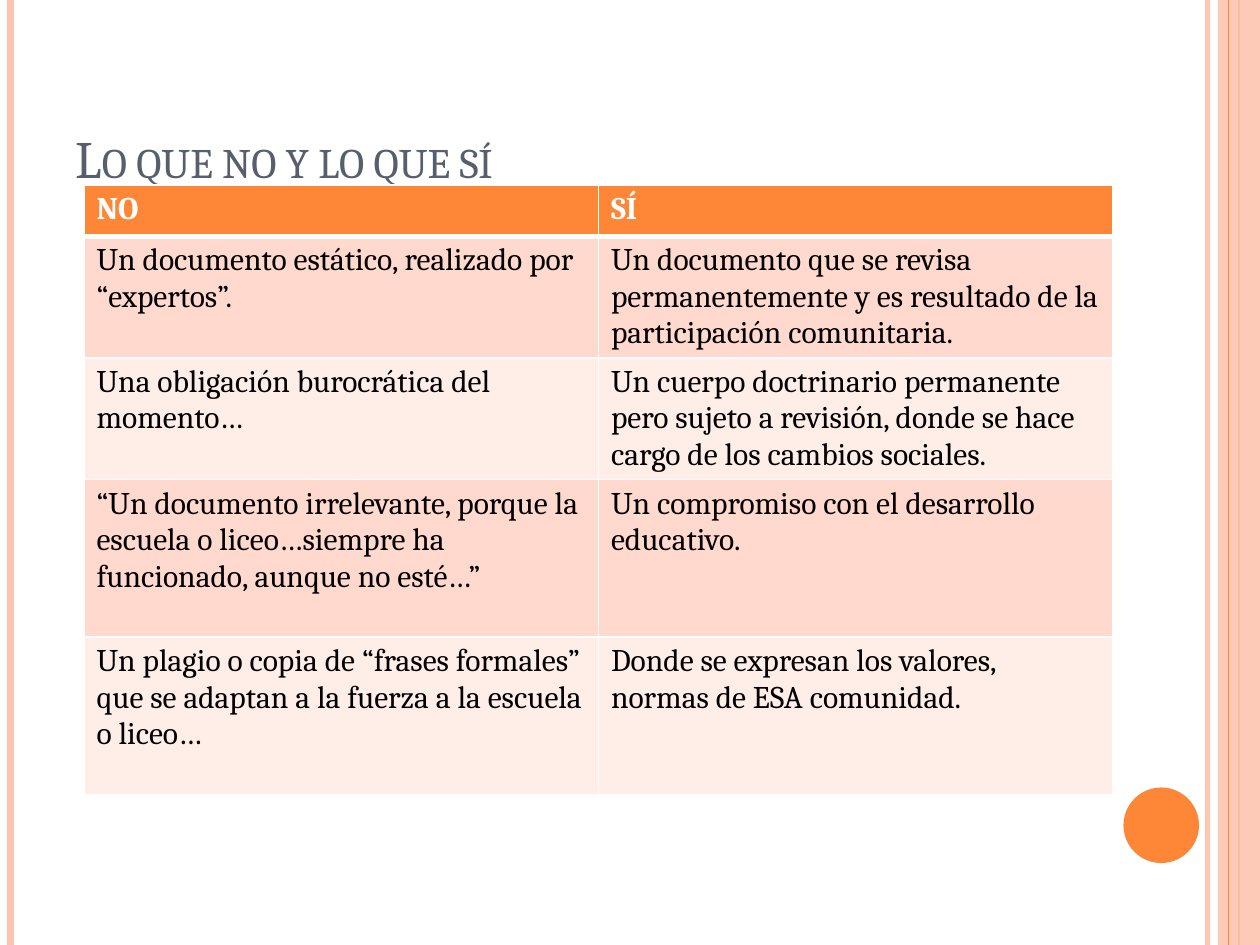
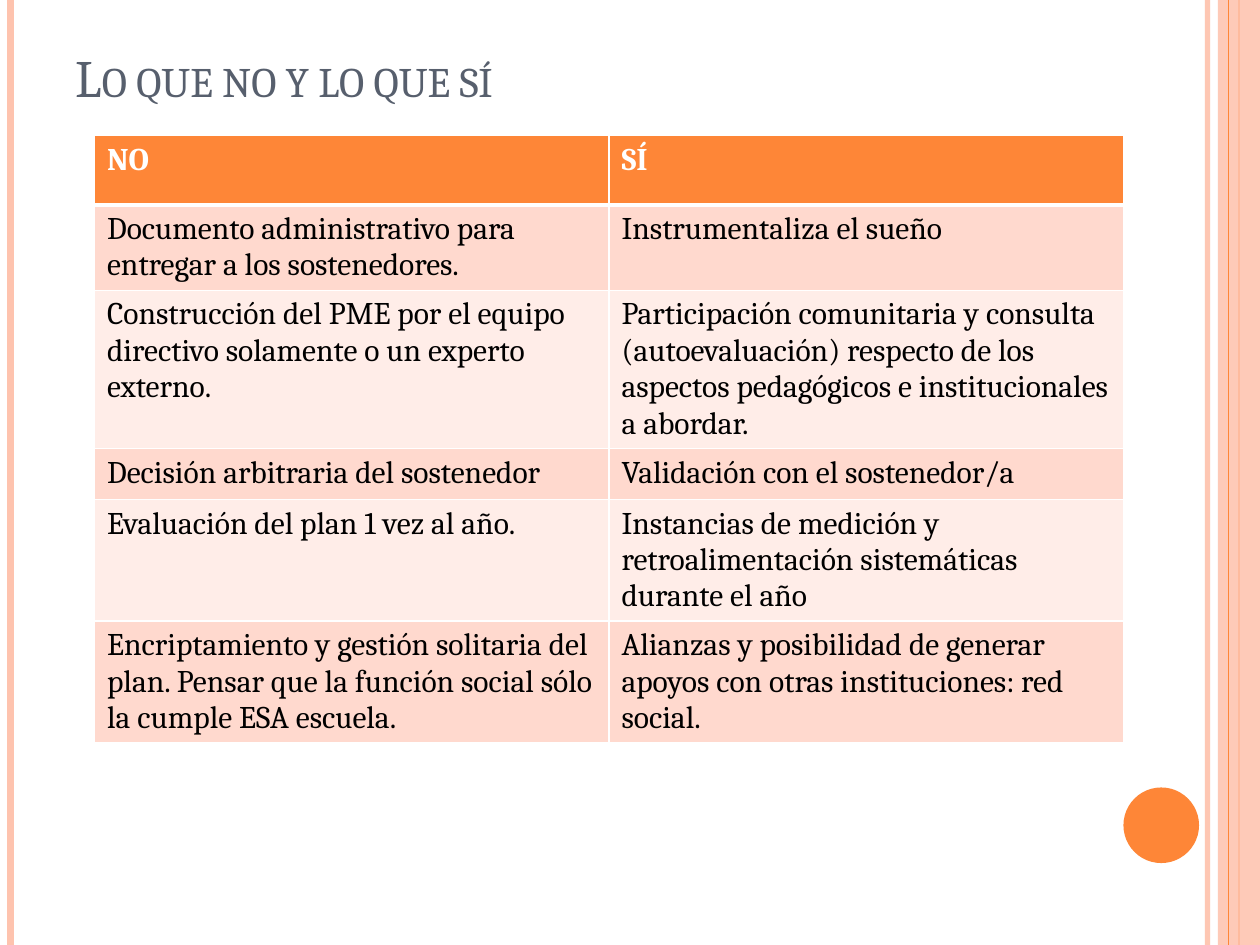
from lxml import etree
from pptx import Presentation
from pptx.dml.color import RGBColor
from pptx.enum import shapes, text
from pptx.oxml.ns import qn
from pptx.util import Pt

ORANGE = RGBColor(0xFE, 0x86, 0x37)
PEACH = RGBColor(0xFE, 0xC3, 0xAE)
BAND_DARK = RGBColor(0xFF, 0xD9, 0xCE)
BAND_LIGHT = RGBColor(0xFF, 0xED, 0xE8)
SLATE = RGBColor(0x57, 0x5F, 0x6D)
WHITE = RGBColor(0xFF, 0xFF, 0xFF)
BLACK = RGBColor(0, 0, 0)
FONT = "Cambria"
WIDTH, HEIGHT = 720, 540
TITLE = "Lo que no y lo que sí"
HEADINGS = ("NO", "SÍ")

FIRST_CONTRASTS = [
    (3, "Un documento estático, realizado por “expertos”.",
     "Un documento que se revisa permanentemente y es resultado de la participación comunitaria."),
    (3, "Una obligación burocrática del momento…",
     "Un cuerpo doctrinario permanente pero sujeto a revisión, donde se hace cargo de los cambios sociales."),
    (4, "“Un documento irrelevante, porque la escuela o liceo…siempre ha funcionado, aunque no esté…”",
     "Un compromiso con el desarrollo educativo."),
    (4, "Un plagio o copia de “frases formales” que se adaptan a la fuerza a la escuela o liceo…",
     "Donde se expresan los valores, normas de ESA comunidad."),
]
SECOND_CONTRASTS = [
    (2, "Documento administrativo para entregar a los sostenedores.",
     "Instrumentaliza el sueño"),
    (4, "Construcción del PME por el equipo directivo solamente o un experto externo.",
     "Participación comunitaria y consulta (autoevaluación) respecto de los aspectos "
     "pedagógicos e institucionales a abordar."),
    (1, "Decisión arbitraria del sostenedor", "Validación con el sostenedor/a"),
    (3, "Evaluación del plan 1 vez al año.",
     "Instancias de medición y retroalimentación sistemáticas durante el año"),
    (3, "Encriptamiento y gestión solitaria del plan. Pensar que la función social sólo la cumple ESA escuela.",
     "Alianzas y posibilidad de generar apoyos con otras instituciones: red social."),
]


def set_opacity(part, percent):
    for color in part.element.spPr.iter(qn("a:srgbClr")):
        etree.SubElement(color, qn("a:alpha"), val=str(percent * 1000))


def add_run(paragraph, words, size, color, bold=False):
    run = paragraph.add_run()
    run.text = words
    run.font.name = FONT
    run.font.size = Pt(size)
    run.font.bold = bold
    run.font.color.rgb = color
    return run


def add_stripe(slide, x, color, weight, opacity=100):
    stripe = slide.shapes.add_connector(
        shapes.MSO_CONNECTOR.STRAIGHT, Pt(x), Pt(0), Pt(x), Pt(HEIGHT))
    stripe.line.color.rgb = color
    stripe.line.width = Pt(weight)
    if opacity < 100:
        set_opacity(stripe, opacity)
    etree.SubElement(stripe.element.spPr, qn("a:effectLst"))


def add_solid(slide, preset, box, color):
    solid = slide.shapes.add_shape(preset, *map(Pt, box))
    solid.shadow.inherit = False
    solid.fill.solid()
    solid.fill.fore_color.rgb = color
    solid.line.fill.background()
    return solid


def draw_frame(slide):
    add_stripe(slide, WIDTH - 30, PEACH, 3, 93)
    add_stripe(slide, 6, PEACH, 4.5)
    add_stripe(slide, WIDTH - 12, ORANGE, 1.5)
    edge = add_solid(slide, shapes.MSO_SHAPE.RECTANGLE, (WIDTH - 24, 0, 24, HEIGHT), PEACH)
    set_opacity(edge, 87)
    add_stripe(slide, WIDTH - 18, ORANGE, 0.75)
    add_solid(slide, shapes.MSO_SHAPE.OVAL, (642, 450, 43.2, 43.2), ORANGE)


def write_title(slide, box):
    title = slide.shapes.title
    title.left, title.top, title.width, title.height = map(Pt, box)
    frame = title.text_frame
    frame.word_wrap = True
    frame.auto_size = text.MSO_AUTO_SIZE.NONE
    frame.vertical_anchor = text.MSO_ANCHOR.BOTTOM
    heading = frame.paragraphs[0]
    heading.alignment = text.PP_ALIGN.LEFT
    run = add_run(heading, TITLE, 30, SLATE)
    run.font.element.set("cap", "small") if hasattr(run.font, "element") else \
        heading.runs[0]._r.get_or_add_rPr().set("cap", "small")


def set_borders(cell, top, bottom):
    properties = cell._tc.get_or_add_tcPr()
    weights = {"a:lnL": 1, "a:lnR": 1, "a:lnT": top, "a:lnB": bottom}
    for position, (side, weight) in enumerate(weights.items()):
        border = etree.Element(qn(side), w=str(Pt(weight)))
        fill = etree.SubElement(border, qn("a:solidFill"))
        etree.SubElement(fill, qn("a:srgbClr"), val=str(WHITE))
        properties.insert(position, border)


def row_height(lines):
    return max(29.2, 7.2 + 20.7 * lines)


def draw_contrasts(slide, left, top, width, header_height, contrasts):
    heights = [header_height] + [row_height(lines) for lines, *_ in contrasts]
    rows = [HEADINGS] + [pair for _, *pair in contrasts]
    table = slide.shapes.add_table(
        len(rows), 2, Pt(left), Pt(top), Pt(width), Pt(sum(heights))).table
    for column in table.columns:
        column.width = Pt(width / 2)
    for index, (height, pair) in enumerate(zip(heights, rows)):
        table.rows[index].height = Pt(height)
        header = index == 0
        band = ORANGE if header else BAND_DARK if index % 2 else BAND_LIGHT
        for side, words in enumerate(pair):
            cell = table.cell(index, side)
            cell.fill.solid()
            cell.fill.fore_color.rgb = band
            set_borders(cell, 3 if index == 1 else 1, 3 if header else 1)
            add_run(cell.text_frame.paragraphs[0], words, 18,
                    WHITE if header else BLACK, header)


def build_slide(deck, title_height, table_left, table_top, header_height, contrasts):
    slide = deck.slides.add_slide(deck.slide_layouts[5])
    draw_frame(slide)
    write_title(slide, (36, 21.6, 588, title_height))
    draw_contrasts(slide, table_left, table_top, 588, header_height, contrasts)


def main():
    deck = Presentation()
    deck.slide_width, deck.slide_height = Pt(WIDTH), Pt(HEIGHT)
    build_slide(deck, 90, 48, 105.8, row_height(1), FIRST_CONTRASTS)
    build_slide(deck, 44, 54, 77.5, 39.6, SECOND_CONTRASTS)
    deck.save("out.pptx")


if __name__ == "__main__":
    main()
